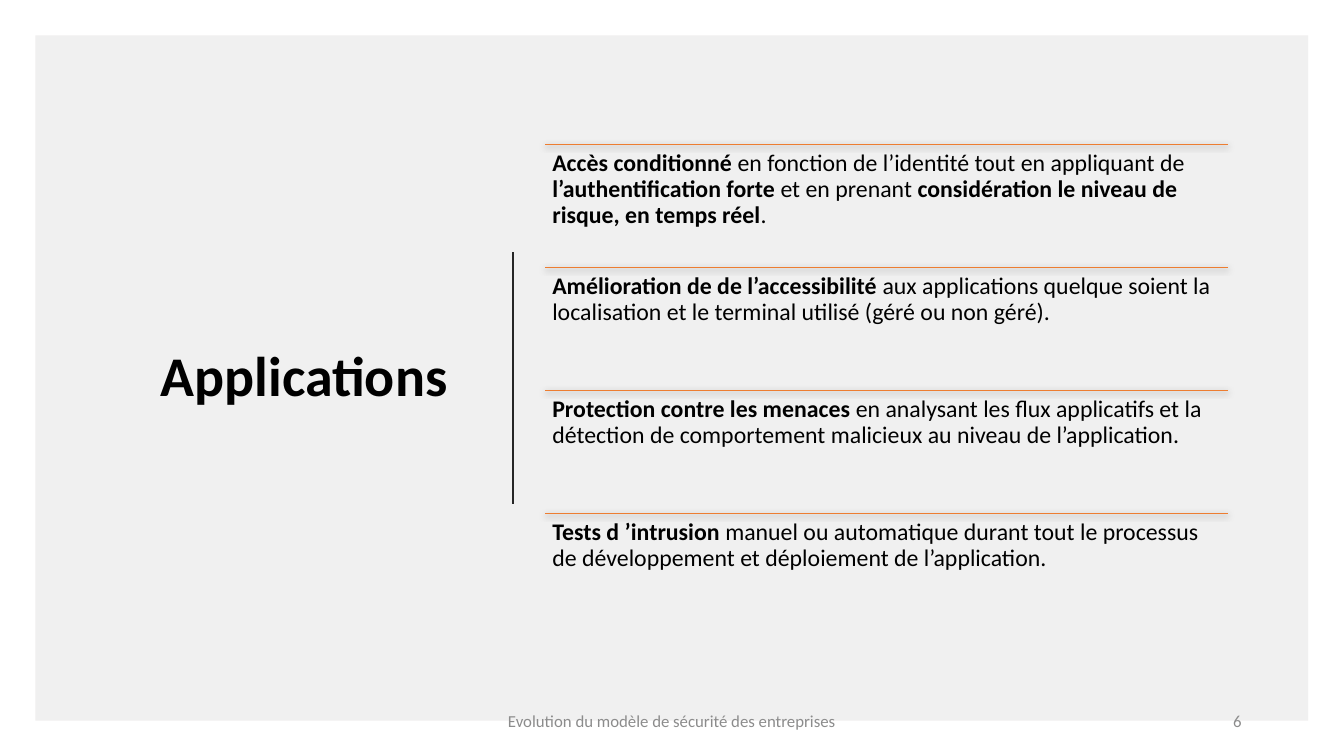
"""Build the slide on application security measures."""
from lxml import etree
from pptx import Presentation
from pptx.dml.color import RGBColor
from pptx.enum import shapes, text
from pptx.oxml import ns
from pptx.util import Cm, Pt

BLACK = RGBColor(0x00, 0x00, 0x00)
DARK = RGBColor(0x26, 0x26, 0x26)
GREY = RGBColor(0x8C, 0x8C, 0x8C)
PANEL = RGBColor(0xE7, 0xE6, 0xE6)
ORANGE = RGBColor(0xED, 0x7D, 0x31)
FONT = "Calibri"

LIST_LEFT, LIST_TOP = Cm(13.74), Cm(3.63)
LIST_WIDTH, ROW_HEIGHT = Cm(17.2), Cm(3.1)

MEASURES = [
    [("Accès conditionné ", True),
     ("en fonction de l’identité tout en appliquant de ", False),
     ("l’authentification forte ", True),
     ("et en prenant ", False),
     ("considération le niveau de risque, en temps réel", True),
     (".", False)],
    [("Amélioration de de l’accessibilité ", True),
     ("aux applications quelque soient la localisation et le terminal utilisé "
      "(géré ou non géré).", False)],
    [("Protection contre les menaces ", True),
     ("en analysant les flux applicatifs et la détection de comportement "
      "malicieux au niveau de l’application.", False)],
    [("Tests d ’intrusion ", True),
     ("manuel ou automatique durant tout le processus de développement et "
      "déploiement de l’application.", False)],
]


def add_node(parent, tag, **attributes):
    node = etree.SubElement(parent, ns.qn(tag))
    for name, value in attributes.items():
        node.set(name, str(value))
    return node


def style(paragraph, size, color, align=text.PP_ALIGN.LEFT):
    paragraph.alignment = align
    paragraph.font.name = FONT
    paragraph.font.size = Pt(size)
    paragraph.font.color.rgb = color


def place(shape, left, top, width, height):
    shape.left, shape.top, shape.width, shape.height = left, top, width, height


def add_panel(page):
    panel = page.shapes.add_shape(
        shapes.MSO_SHAPE.RECTANGLE, Cm(0.89), Cm(0.89), Cm(32.08), Cm(17.27))
    panel.shadow.inherit = False
    panel.fill.solid()
    panel.fill.fore_color.rgb = PANEL
    color = panel._element.spPr.find(".//" + ns.qn("a:srgbClr"))
    add_node(color, "a:alpha", val=60000)
    panel.line.fill.background()
    page.shapes._spTree.insert(2, panel._element)


def add_title(page, wording):
    title = page.shapes.title
    place(title, Cm(2.34), Cm(2.97), Cm(9.19), Cm(13.13))
    frame = title.text_frame
    frame.text = wording
    frame.word_wrap = True
    frame.vertical_anchor = text.MSO_ANCHOR.MIDDLE
    para = frame.paragraphs[0]
    style(para, 40, BLACK, text.PP_ALIGN.RIGHT)
    para.font.bold = True
    para.line_spacing = 0.9


def add_line(page, start, end, color, weight, shadowed=False):
    line = page.shapes.add_connector(shapes.MSO_CONNECTOR.STRAIGHT, *start, *end)
    line.line.color.rgb = color
    line.line.width = Pt(weight)
    effects = add_node(line._element.spPr, "a:effectLst")
    if shadowed:
        shadow = add_node(effects, "a:outerShdw", blurRad=Pt(4.5), dist=Pt(1.5),
                          dir=5400000, algn="ctr", rotWithShape=0)
        shade = add_node(shadow, "a:srgbClr", val=BLACK)
        add_node(shade, "a:alpha", val=63000)


def add_measure(page, top, spans):
    add_line(page, (LIST_LEFT, top), (LIST_LEFT + LIST_WIDTH, top), ORANGE, 0.5, True)
    box = page.shapes.add_textbox(LIST_LEFT, top, LIST_WIDTH, ROW_HEIGHT)
    frame = box.text_frame
    frame.word_wrap = True
    frame.margin_left = frame.margin_right = Cm(0.18)
    frame.margin_top = frame.margin_bottom = Cm(0.18)
    para = frame.paragraphs[0]
    style(para, 17, BLACK)
    para.line_spacing = 0.9
    for wording, bold in spans:
        span = para.add_run()
        span.text = wording
        span.font.bold = bold


def add_footer(page, wording, left, width, align):
    box = page.shapes.add_textbox(left, Cm(17.65), width, Cm(1.01))
    frame = box.text_frame
    frame.word_wrap = True
    frame.vertical_anchor = text.MSO_ANCHOR.MIDDLE
    frame.text = wording
    style(frame.paragraphs[0], 12, GREY, align)


def main():
    deck = Presentation()
    deck.slide_width, deck.slide_height = Cm(33.87), Cm(19.05)
    page = deck.slides.add_slide(deck.slide_layouts[5])
    add_panel(page)
    add_title(page, "Applications")
    add_line(page, (Cm(12.93), Cm(6.35)), (Cm(12.93), Cm(12.7)), DARK, 1.5)
    for row, spans in enumerate(MEASURES):
        add_measure(page, LIST_TOP + row * ROW_HEIGHT, spans)
    add_footer(page, "Evolution du modèle de sécurité des entreprises",
               Cm(11.22), Cm(11.43), text.PP_ALIGN.CENTER)
    add_footer(page, "6", Cm(23.92), Cm(7.62), text.PP_ALIGN.RIGHT)
    deck.save("out.pptx")


if __name__ == "__main__":
    main()
